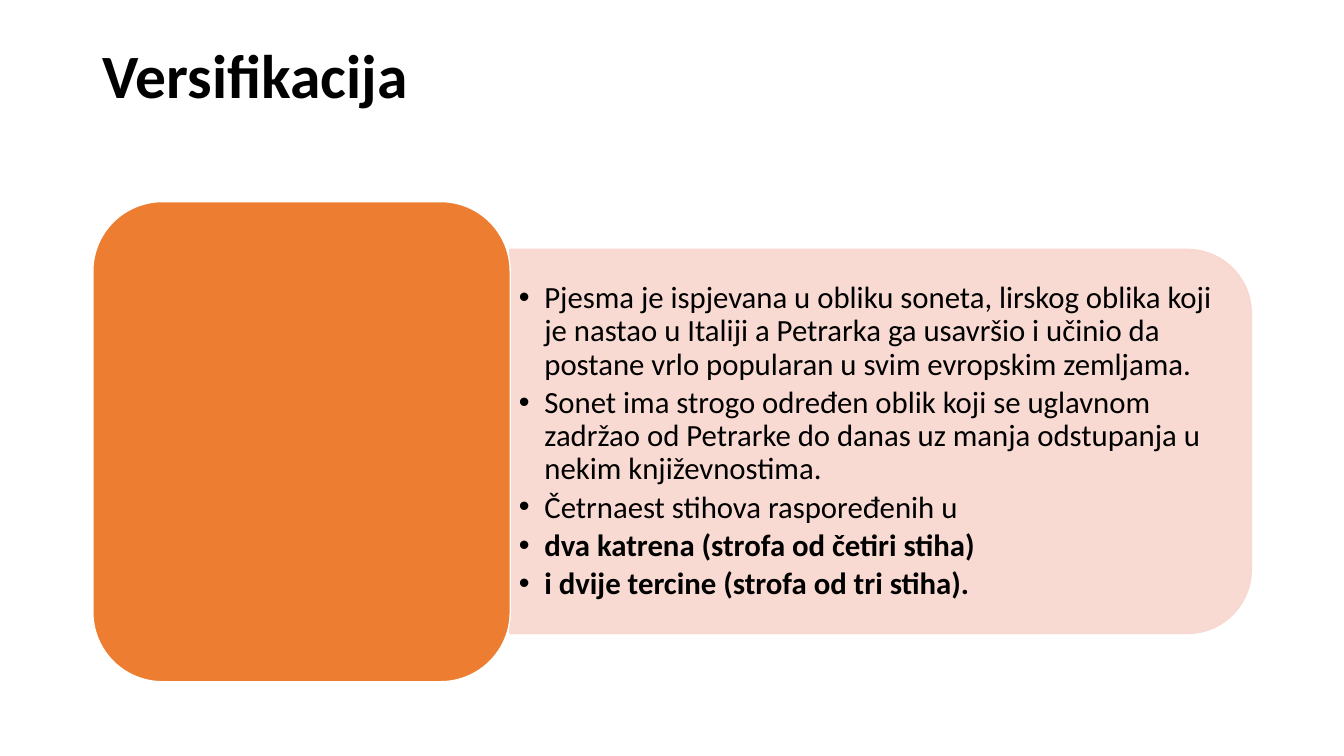
from lxml.etree import SubElement
from pptx import Presentation
from pptx.dml.color import RGBColor
from pptx.enum.shapes import MSO_SHAPE
from pptx.enum.text import MSO_ANCHOR, PP_ALIGN
from pptx.oxml.ns import qn
from pptx.util import Cm, Pt

BLACK = RGBColor(0x00, 0x00, 0x00)
WHITE = RGBColor(0xFF, 0xFF, 0xFF)
ORANGE = RGBColor(0xED, 0x7D, 0x31)
PEACH = RGBColor(0xF8, 0xD7, 0xCE)

points = [
    ("Pjesma je ispjevana u obliku soneta, lirskog oblika koji je nastao u Italiji a Petrarka ga "
     "usavršio i učinio da postane vrlo popularan u svim evropskim zemljama.", False),
    ("Sonet ima strogo određen oblik koji se uglavnom zadržao od Petrarke do danas uz manja "
     "odstupanja u nekim književnostima.", False),
    ("Četrnaest stihova raspoređenih u", False),
    ("dva katrena (strofa od četiri stiha)", True),
    ("i dvije tercine (strofa od tri stiha).", True),
]


def set_text(p, text, size, bold):
    p.alignment = PP_ALIGN.LEFT
    p.line_spacing = 0.9
    r = p.add_run()
    r.text = text
    for name, value in {"name": "Calibri", "size": Pt(size), "bold": bold}.items():
        setattr(r.font, name, value)
    r.font.color.rgb = BLACK


def add_block(kind, box, fill, line):
    sp = s.shapes.add_shape(kind, *map(Cm, box))
    sp.shadow.inherit = False
    sp.fill.solid()
    sp.fill.fore_color.rgb = fill
    sp.line.color.rgb = line
    sp.line.width = Pt(1)
    return sp


prs = Presentation()
prs.slide_width, prs.slide_height = Cm(33.87), Cm(19.05)
s = prs.slides.add_slide(prs.slide_layouts[5])

title = s.shapes.title
box = {"left": 2.33, "top": 1.01, "width": 29.21, "height": 3.68}
for name, value in box.items():
    setattr(title, name, Cm(value))
tf = title.text_frame
tf.vertical_anchor = MSO_ANCHOR.TOP
set_text(tf.paragraphs[0], "Versifikacija", 44, True)

panel = add_block(MSO_SHAPE.ROUND_2_SAME_RECTANGLE, (17.35, 1.78, 9.68, 18.69), PEACH, PEACH)
panel.rotation = 90
for clr in panel.element.spPr.iter(qn("a:srgbClr")):
    SubElement(clr, qn("a:alpha"), val="90000")

tf = s.shapes.add_textbox(Cm(12.85), Cm(6.76), Cm(18.21), Cm(8.74)).text_frame
frame = {"word_wrap": True, "vertical_anchor": MSO_ANCHOR.MIDDLE,
         "margin_left": Cm(0.23), "margin_right": Cm(0.23),
         "margin_top": Cm(0.13), "margin_bottom": Cm(0.13)}
for name, value in frame.items():
    setattr(tf, name, value)
for i, (text, bold) in enumerate(points):
    p = tf.add_paragraph() if i else tf.paragraphs[0]
    p.level = 1
    p.space_after = Pt(3.6)
    set_text(p, text, 22, bold)
    pPr = p._p.get_or_add_pPr()
    pPr.set("marL", str(Cm(0.64)))
    pPr.set("indent", str(-Cm(0.64)))
    SubElement(pPr, qn("a:buFont"), typeface="Arial")
    SubElement(pPr, qn("a:buChar"), char="•")

add_block(MSO_SHAPE.ROUNDED_RECTANGLE, (2.34, 5.08, 10.52, 12.1), ORANGE, WHITE)

prs.save("out.pptx")
